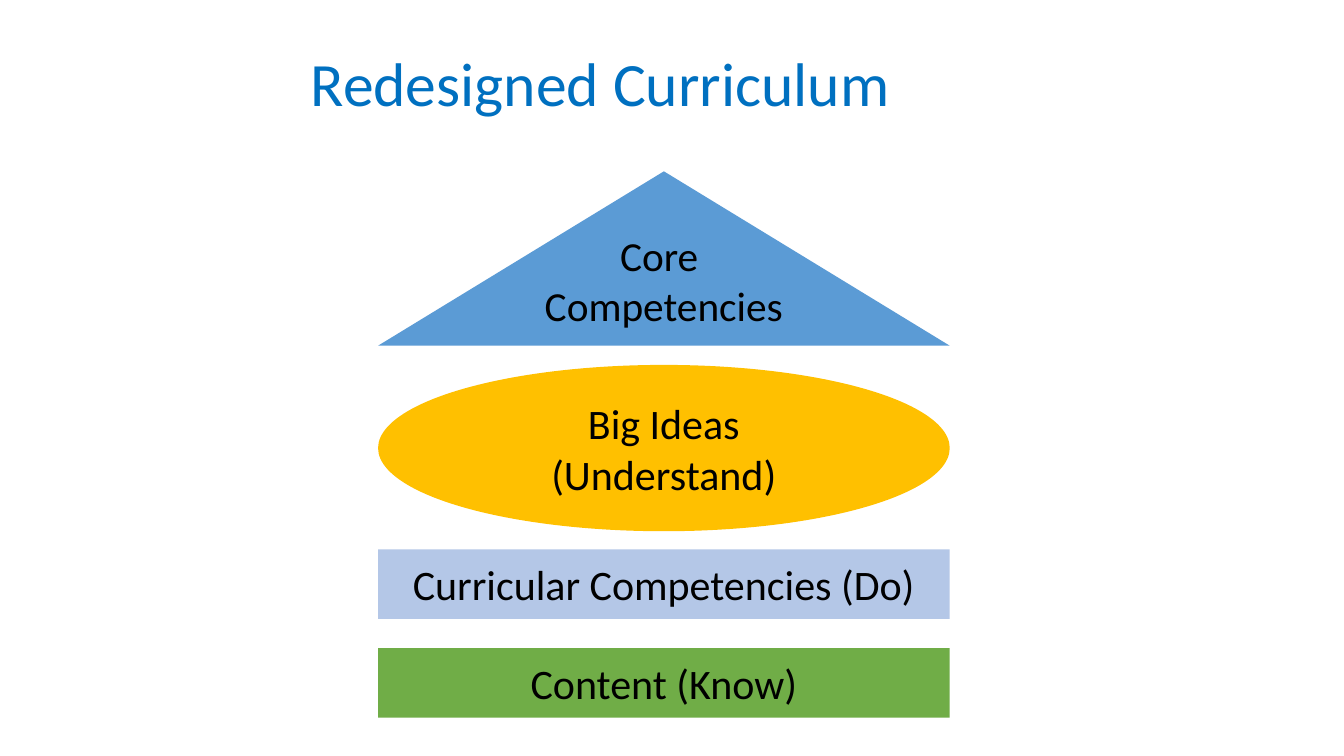
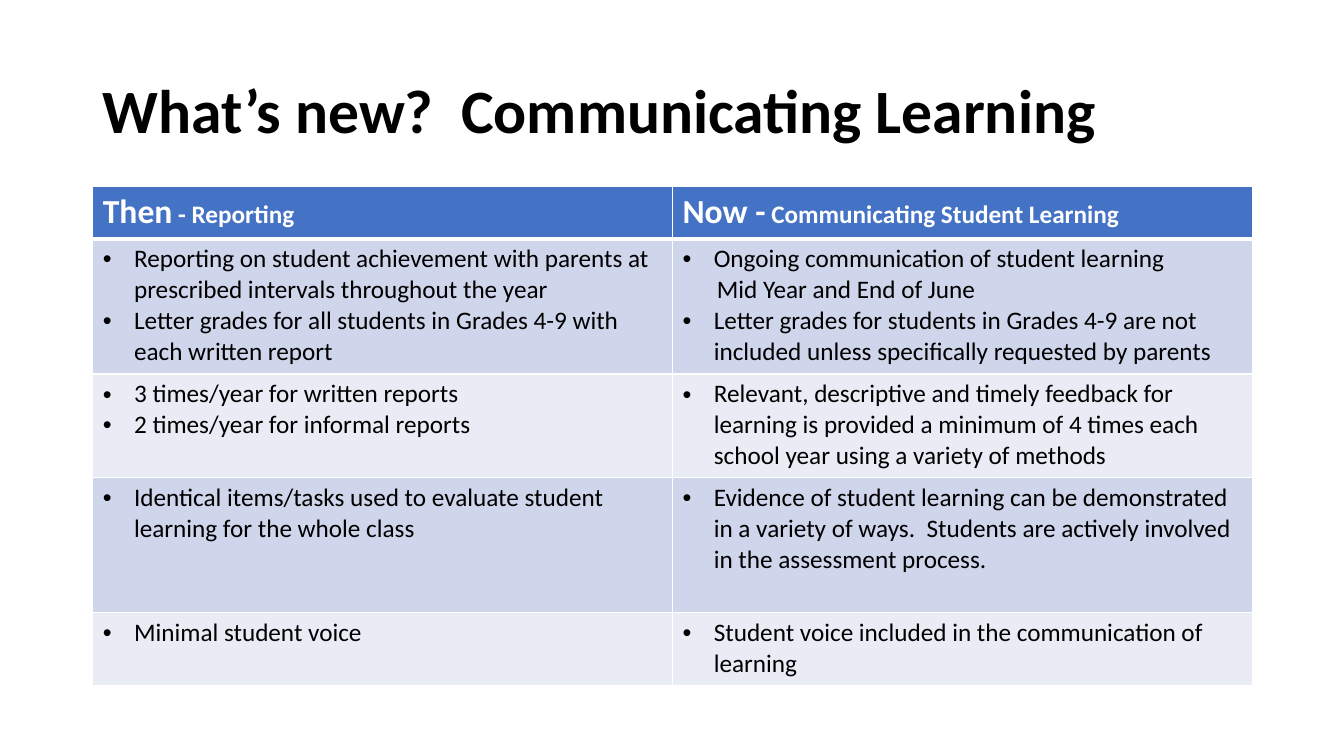
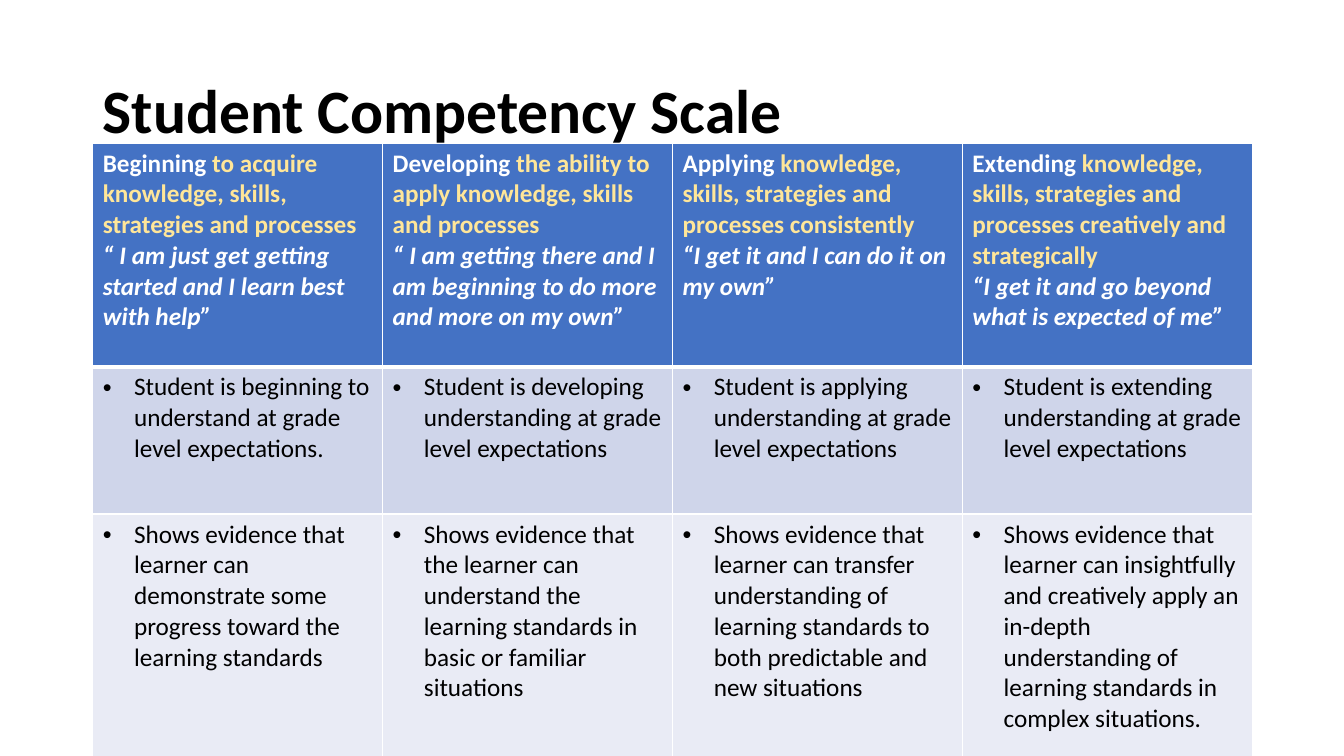
from lxml.etree import SubElement
from pptx import Presentation
from pptx.dml.color import RGBColor
from pptx.enum.shapes import MSO_SHAPE as SHAPE
from pptx.enum.text import MSO_ANCHOR as ANCHOR, PP_ALIGN as ALIGN
from pptx.oxml.ns import qn
from pptx.util import Inches, Pt

FONT = "Calibri"
BLACK, WHITE, TITLE_BLUE, CREAM = "000000", "FFFFFF", "0070C0", "FFE699"
HEADER, BANDS = "4472C4", ("CFD5EA", "E9EBF5")
TITLE_BOX = (0.92, 0.4, 11.5, 1.45)
BULLET_INDENT = 0.31


def color(value):
    return RGBColor.from_string(value)


def apply(target, values):
    for name, value in values.items():
        setattr(target, name, value)


def add_run(p, text, size=18, c=BLACK, bold=False, italic=False):
    r = p.add_run()
    r.text = text
    apply(r.font, {"name": FONT, "size": Pt(size), "bold": bold, "italic": italic})
    r.font.color.rgb = color(c)


def paragraphs(tf, items):
    for i, item in enumerate(items):
        yield (tf.add_paragraph() if i else tf.paragraphs[0]), item


def add_title(s, text, box=TITLE_BOX, c=BLACK, bold=True, align=ALIGN.LEFT):
    tf = s.shapes.add_textbox(*map(Inches, box)).text_frame
    apply(tf, {"word_wrap": True, "vertical_anchor": ANCHOR.MIDDLE})
    p = tf.paragraphs[0]
    apply(p, {"alignment": align, "line_spacing": 0.9})
    add_run(p, text, 44, c, bold)


def add_block(s, kind, box, fill, lines, size=30, side=0.06, bottom=0.06):
    sp = s.shapes.add_shape(kind, *map(Inches, box))
    sp.shadow.inherit = False
    sp.fill.solid()
    sp.fill.fore_color.rgb = color(fill)
    sp.line.fill.background()
    tf = sp.text_frame
    apply(tf, {"word_wrap": True, "vertical_anchor": ANCHOR.MIDDLE,
               "margin_left": Inches(side), "margin_right": Inches(side),
               "margin_top": Inches(0.06), "margin_bottom": Inches(bottom)})
    for p, line in paragraphs(tf, lines):
        p.alignment = ALIGN.CENTER
        add_run(p, line, size)


def set_indent(p, left, bullet):
    pPr = p._p.get_or_add_pPr()
    pPr.set("marL", str(Inches(left)))
    pPr.set("indent", str(-Inches(left) if bullet else 0))
    if bullet:
        SubElement(pPr, qn("a:buFont"), typeface="Arial")
        SubElement(pPr, qn("a:buChar"), char="•")


def style_cell(cell, fill, top, bottom):
    tcPr = cell._tc.get_or_add_tcPr()
    for side, width in (("L", 1), ("R", 1), ("T", top), ("B", bottom)):
        ln = SubElement(tcPr, qn(f"a:ln{side}"), w=str(Pt(width)))
        SubElement(SubElement(ln, qn("a:solidFill")), qn("a:srgbClr"), val=WHITE)
    cell.fill.solid()
    cell.fill.fore_color.rgb = color(fill)


def header_cell(cell, lines):
    style_cell(cell, HEADER, 1, 3)
    for p, runs in paragraphs(cell.text_frame, lines):
        for text, fmt in runs:
            add_run(p, text, **{"c": WHITE, "bold": True, **fmt})


def body_cell(cell, lines, row):
    style_cell(cell, BANDS[(row - 1) % 2], 3 if row == 1 else 1, 1)
    for p, line in paragraphs(cell.text_frame, lines):
        if isinstance(line, tuple):
            text, left = line
            set_indent(p, left, False)
        else:
            text = line
            set_indent(p, BULLET_INDENT, True)
        add_run(p, text)


def add_grid(s, left, top, width, heights, headers, rows):
    n = len(headers)
    table = s.shapes.add_table(len(heights), n, Inches(left), Inches(top),
                               Inches(width), Inches(sum(heights))).table
    for col in table.columns:
        col.width = Inches(width / n)
    for row, height in zip(table.rows, heights):
        row.height = Inches(height)
    for j, lines in enumerate(headers):
        header_cell(table.cell(0, j), lines)
    for i, row in enumerate(rows, 1):
        for j, lines in enumerate(row):
            body_cell(table.cell(i, j), lines, i)


def curriculum_slide(s):
    add_title(s, "Redesigned Curriculum", (1.78, 0.36, 8.35, 1), TITLE_BLUE, False, ALIGN.CENTER)
    left, width = 3.75, 5.67
    add_block(s, SHAPE.ISOSCELES_TRIANGLE, (left, 1.7, width, 1.73), "5B9BD5",
              ["Core ", "Competencies"], size=29.5, side=0.1, bottom=0.5)
    add_block(s, SHAPE.OVAL, (left, 3.62, width, 1.65), "FFC000",
              ["Big Ideas (Understand)"], side=0.3)
    bars = [("Curricular Competencies (Do)", "B4C7E7"), ("Content (Know)", "70AD47")]
    for i, (text, fill) in enumerate(bars):
        add_block(s, SHAPE.RECTANGLE, (left, 5.45 + 0.98 * i, width, 0.69), fill, [text])


def communicating_slide(s):
    add_title(s, "What’s new?  Communicating Learning")
    headers = [[[(lead, {"size": 24}), (rest, {})]] for lead, rest in (
        ("Then", " - Reporting"), ("Now -", " Communicating Student Learning"))]
    rows = [
        (["Reporting on student achievement with parents at prescribed intervals throughout the year",
          "Letter grades for all students in Grades 4-9 with each written report"],
         ["Ongoing communication of student learning",
          ("Mid Year and End of June", 0.34),
          "Letter grades for students in Grades 4-9 are not included unless specifically requested by parents"]),
        (["3 times/year for written reports", "2 times/year for informal reports"],
         ["Relevant, descriptive and timely feedback for learning is provided a minimum of 4 times each "
          "school year using a variety of methods"]),
        (["Identical items/tasks used to evaluate student learning for the whole class"],
         ["Evidence of student learning can be demonstrated in a variety of ways.  Students are actively "
          "involved in the assessment process."]),
        (["Minimal student voice"],
         ["Student voice included in the communication of learning"]),
    ]
    add_grid(s, 0.92, 1.85, 11.5, (0.52, 1.34, 1.03, 1.34, 0.72), headers, rows)


def scale_slide(s):
    add_title(s, "Student Competency Scale")
    levels = [
        ("Beginning ", "to acquire knowledge, skills, strategies and processes",
         "“ I am just get getting started and I learn best with help”",
         "Student is beginning to understand at grade level expectations.",
         "Shows evidence that learner can demonstrate some progress toward the learning standards"),
        ("Developing ", "the ability to apply knowledge, skills and processes",
         "“ I am getting there and I am beginning to do more and more on my own”",
         "Student is developing understanding at grade level expectations",
         "Shows evidence that the learner can understand the learning standards in basic or familiar situations"),
        ("Applying ", "knowledge, skills, strategies and processes consistently",
         "“I get it and I can do it on my own”",
         "Student is applying understanding at grade level expectations",
         "Shows evidence that learner can transfer understanding of learning standards to both predictable "
         "and new situations"),
        ("Extending ", "knowledge, skills, strategies and processes creatively and strategically",
         "“I get it and go beyond what is expected of me”",
         "Student is extending understanding at grade level expectations",
         "Shows evidence that learner can insightfully and creatively apply an in-depth understanding of "
         "learning standards in complex situations."),
    ]
    headers = [[[(name, {}), (aim, {"c": CREAM})], [(quote, {"italic": True})]]
               for name, aim, quote, *_ in levels]
    rows = [[[level[k]] for level in levels] for k in (3, 4)]
    add_grid(s, 0.92, 1.42, 11.5, (2.22, 1.46, 2.46), headers, rows)


def main():
    prs = Presentation()
    apply(prs, {"slide_width": Inches(13.33), "slide_height": Inches(7.5)})
    for build in (curriculum_slide, communicating_slide, scale_slide):
        build(prs.slides.add_slide(prs.slide_layouts[6]))
    prs.save("out.pptx")


if __name__ == "__main__":
    main()
